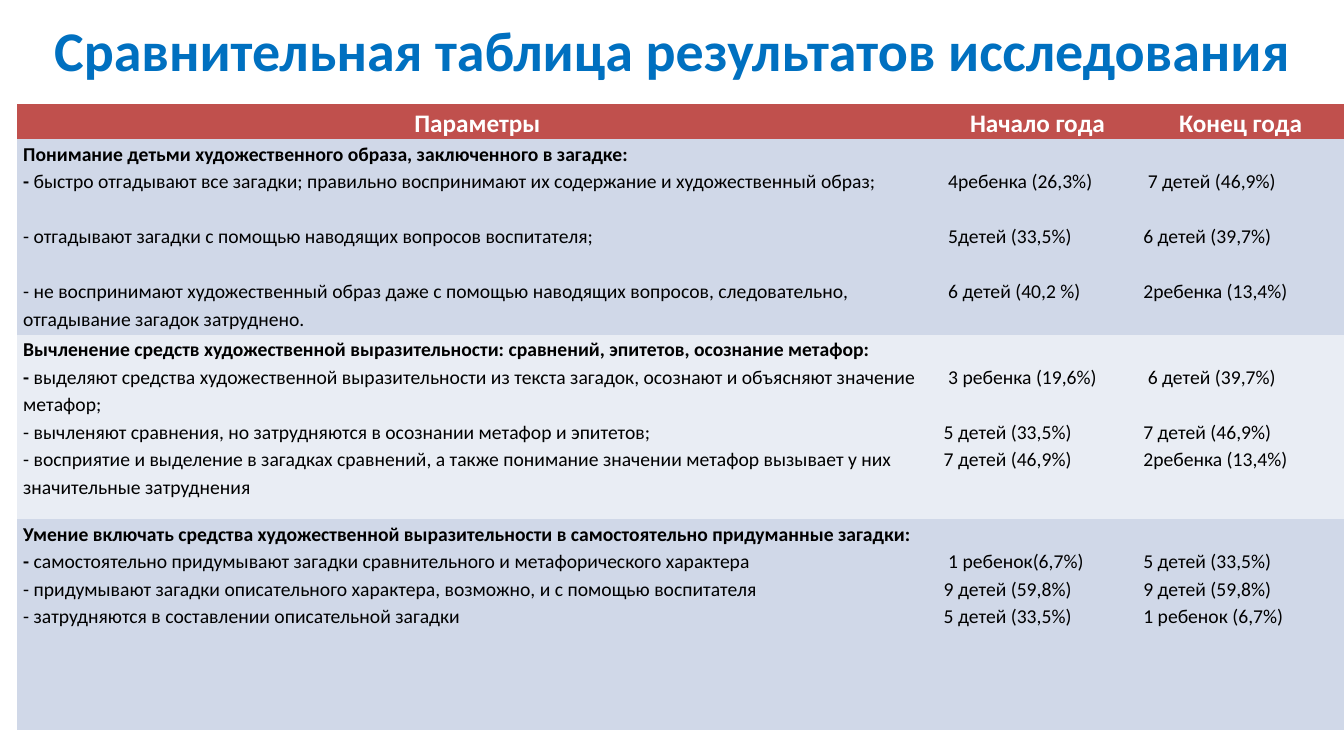
from pptx import Presentation
from pptx.dml.color import RGBColor
from pptx.enum.text import MSO_ANCHOR, PP_ALIGN
from pptx.util import Inches, Pt

CENTER, LEFT = PP_ALIGN.CENTER, PP_ALIGN.LEFT
TOP = MSO_ANCHOR.TOP
COLORS = {"title": "0070C0", "header": "C0504D", "white": "FFFFFF",
          "black": "000000", "band1": "D0D8E8", "band2": "E9EDF4"}
NO_STYLE = "{2D5ABB26-0587-4C30-8999-92F81FD0307C}"
LINE = Pt(19.65)  # one 14 pt line at 1.15 spacing

HEADERS = ["Параметры", "Начало года", "Конец года"]
# Group: heading, then (parameter, start of year, end of year,
# lines skipped before the parameter, lines skipped before the values)
GROUPS = [
    ("Понимание детьми художественного образа, заключенного в загадке:", [
        ("быстро отгадывают все загадки; правильно воспринимают их содержание и художественный образ;",
         " 4ребенка (26,3%)", " 7 детей (46,9%)", 0, 0),
        ("отгадывают загадки с помощью наводящих вопросов воспитателя;",
         " 5детей (33,5%)", "6 детей (39,7%)", 1, 1),
        ("не воспринимают художественный образ даже с помощью наводящих вопросов, следовательно, "
         "отгадывание загадок затруднено.",
         " 6 детей (40,2 %)", "2ребенка (13,4%)", 1, 1)]),
    ("Вычленение средств художественной выразительности: сравнений, эпитетов, осознание метафор:", [
        ("выделяют средства художественной выразительности из текста загадок, осознают и объясняют "
         "значение метафор;",
         " 3 ребенка (19,6%)", " 6 детей (39,7%)", 0, 0),
        ("вычленяют сравнения, но затрудняются в осознании метафор и эпитетов;",
         "5 детей (33,5%)", "7 детей (46,9%)", 0, 1),
        ("восприятие и выделение в загадках сравнений, а также понимание значении метафор вызывает "
         "у них значительные затруднения",
         "7 детей (46,9%)", "2ребенка (13,4%)", 0, 0)]),
    ("Умение включать средства художественной выразительности в самостоятельно придуманные загадки:", [
        ("самостоятельно придумывают загадки сравнительного и метафорического характера",
         " 1 ребенок(6,7%)", "5 детей (33,5%)", 0, 0),
        ("придумывают загадки описательного характера, возможно, и с помощью воспитателя",
         "9 детей (59,8%)", "9 детей (59,8%)", 0, 0),
        ("затрудняются в составлении описательной загадки",
         "5 детей (33,5%)", "1 ребенок (6,7%)", 0, 0)]),
]


def write(p, text, size=14, bold=False, color="black", align=LEFT, spacing=1.15, before=0):
    p.alignment = align
    p.line_spacing = spacing
    p.space_before = before
    r = p.add_run()
    r.text = text
    r.font.name = "Calibri"
    r.font.size = Pt(size)
    r.font.bold = bold
    r.font.color.rgb = RGBColor.from_string(COLORS[color])


prs = Presentation()
prs.slide_width, prs.slide_height = Inches(13.33), Inches(7.5)
s = prs.slides.add_slide(prs.slide_layouts[5])

title = s.shapes.title
title.left, title.top = Inches(0), Inches(0.1)
title.width, title.height = Inches(13.33), Inches(0.77)
title.text_frame.vertical_anchor = TOP
write(title.text_frame.paragraphs[0], "Сравнительная таблица результатов исследования",
      size=40, bold=True, color="title", align=CENTER, spacing=1.0)

frame = s.shapes.add_table(4, 3, Inches(0.17), Inches(1.03), Inches(13.16), Inches(6.21))
frame._element.xpath(".//a:tableStyleId")[0].text = NO_STYLE
table = frame.table
for column, width in zip(table.columns, [9.13, 1.98, 2.05]):
    column.width = Inches(width)
for row, height, fill in zip(table.rows, [0.35, 1.94, 1.83, 2.09],
                             ["header", "band1", "band2", "band1"]):
    row.height = Inches(height)
    for cell in row.cells:
        cell.margin_left = cell.margin_right = Inches(0.06)
        cell.margin_top = cell.margin_bottom = 0
        cell.fill.solid()
        cell.fill.fore_color.rgb = RGBColor.from_string(COLORS[fill])

for col, header in enumerate(HEADERS):
    write(table.cell(0, col).text_frame.paragraphs[0], header,
          size=18, bold=True, color="white", align=CENTER)

for row, (heading, items) in enumerate(GROUPS, start=1):
    tf = table.cell(row, 0).text_frame
    write(tf.paragraphs[0], heading, bold=True)
    for i, (parameter, _, _, skipped, _) in enumerate(items):
        p = tf.add_paragraph()
        write(p, "- ", bold=i == 0)
        write(p, parameter, before=skipped * LINE)

    for col in (1, 2):
        cell = table.cell(row, col)
        cell.margin_top = LINE  # values start level with the first parameter
        tf = cell.text_frame
        for i, item in enumerate(items):
            p = tf.add_paragraph() if i else tf.paragraphs[0]
            write(p, item[col], before=item[4] * LINE)

prs.save("out.pptx")
